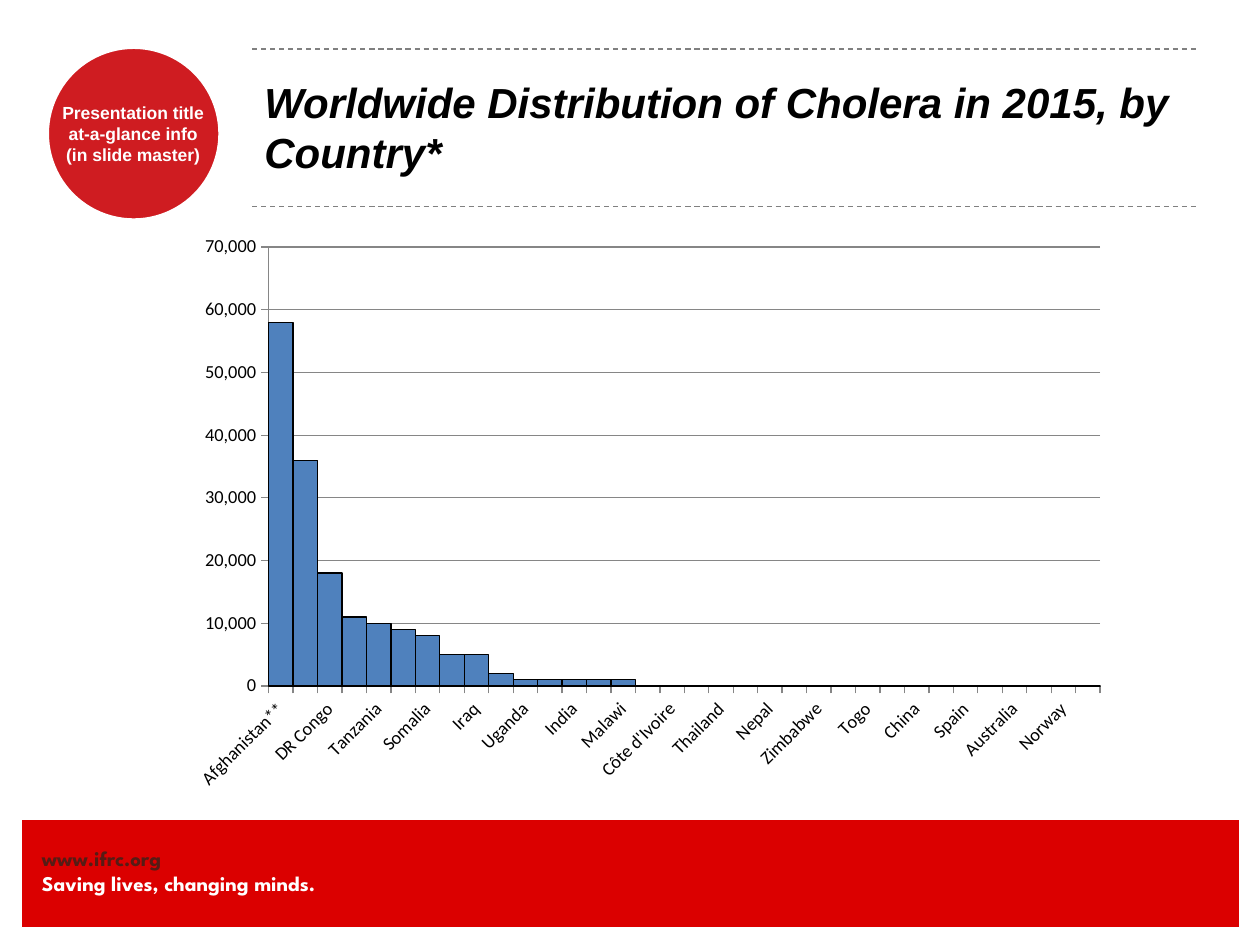
from lxml.etree import SubElement
from pptx import Presentation
from pptx.chart.data import CategoryChartData
from pptx.dml.color import RGBColor
from pptx.enum.chart import XL_CHART_TYPE, XL_TICK_MARK
from pptx.enum.dml import MSO_LINE
from pptx.enum.shapes import MSO_CONNECTOR, MSO_SHAPE
from pptx.enum.text import MSO_ANCHOR, PP_ALIGN
from pptx.oxml import parse_xml
from pptx.oxml.ns import nsdecls, qn
from pptx.util import Pt

TITLE = "Worldwide Distribution of Cholera in 2015, by Country*"
BADGE = ["Presentation title", "at-a-glance info", "(in slide master)"]
FOOTER = [("www.ifrc.org", "551C15"), ("Saving lives, changing minds.", "FFFFFF")]
CASES = [
    ("Afghanistan**", 58000), ("Haiti", 36000), ("DR Congo", 18000), ("Kenya", 11000),
    ("Tanzania", 10000), ("Mozambique", 9000), ("Somalia", 8000), ("Nigeria", 5000),
    ("Iraq", 5000), ("South Sudan", 2000), ("Uganda", 1000), ("India", 1000),
    ("India", 1000), ("Ghana", 1000), ("Malawi", 1000), ("Burundi", 0),
    ("Côte d'Ivoire", 0), ("Thailand", 0), ("Thailand", 0), ("Cameroon", 0),
    ("Nepal", 0), ("Nepal", 0), ("Zimbabwe", 0), ("Niger", 0), ("Togo", 0),
    ("United Kingdom", 0), ("China", 0), ("Japan", 0), ("Spain", 0),
    ("Switzerland", 0), ("Australia", 0), ("France", 0), ("Norway", 0), ("Sweden", 0),
]
PLOT_AREA = {"x": 0.1, "y": 0.04, "w": 0.88, "h": 0.76}
RULE_LEFT, RULE_RIGHT, RULE_TOPS = 144, 684, (28, 118)


def rgb(color):
    return RGBColor.from_string(color)


def style_line(line, color, width):
    line.color.rgb = rgb(color)
    line.width = Pt(width)


def add_panel(slide, preset, box, fill, line_width):
    panel = slide.shapes.add_shape(preset, *map(Pt, box))
    panel.shadow.inherit = False
    panel.fill.solid()
    panel.fill.fore_color.rgb = rgb(fill)
    style_line(panel.line, "FFFFFF", line_width)


def add_text(slide, box, lines, font, size, align=PP_ALIGN.LEFT, italic=False,
             inset=(0, 0), anchor=MSO_ANCHOR.TOP):
    frame = slide.shapes.add_textbox(*map(Pt, box)).text_frame
    frame.word_wrap = True
    frame.vertical_anchor = anchor
    frame.margin_left = frame.margin_right = Pt(inset[0])
    frame.margin_top = frame.margin_bottom = Pt(inset[1])
    for index, (words, color) in enumerate(lines):
        paragraph = frame.add_paragraph() if index else frame.paragraphs[0]
        paragraph.alignment = align
        run = paragraph.add_run()
        run.text = words
        run.font.name, run.font.size = font, Pt(size)
        run.font.bold, run.font.italic = True, italic
        run.font.color.rgb = rgb(color)


def add_rule(slide, top):
    rule = slide.shapes.add_connector(
        MSO_CONNECTOR.STRAIGHT, Pt(RULE_LEFT), Pt(top), Pt(RULE_RIGHT), Pt(top))
    style_line(rule.line, "808080", 0.75)
    rule.line.dash_style = MSO_LINE.DASH
    SubElement(rule._element.spPr, qn("a:effectLst"))


def place_plot(chart):
    parts = "".join(f'<c:{side}Mode val="edge"/>' for side in "xy")
    parts += "".join(f'<c:{side} val="{share}"/>' for side, share in PLOT_AREA.items())
    layout = parse_xml(
        f'<c:layout {nsdecls("c")}><c:manualLayout><c:layoutTarget val="inner"/>'
        f"{parts}</c:manualLayout></c:layout>")
    plot_area = chart._chartSpace.chart.plotArea
    for old_layout in plot_area.findall(qn("c:layout")):
        plot_area.remove(old_layout)
    plot_area.insert(0, layout)


def add_cases_chart(slide, box):
    cases = CategoryChartData(number_format="#,##0")
    cases.categories = [country for country, _ in CASES]
    cases.add_series("Series 1", [count for _, count in CASES])
    chart = slide.shapes.add_chart(
        XL_CHART_TYPE.COLUMN_CLUSTERED, *map(Pt, box), cases).chart
    chart.has_legend = chart.has_title = False
    chart.font.name, chart.font.size = "Calibri", Pt(10)
    chart.font.color.rgb = rgb("000000")

    columns = chart.plots[0]
    columns.gap_width = 0
    columns.vary_by_categories = False
    series = columns.series[0]
    series.format.fill.solid()
    series.format.fill.fore_color.rgb = rgb("4F81BD")
    style_line(series.format.line, "000000", 0.75)

    countries, counts = chart.category_axis, chart.value_axis
    for axis in (countries, counts):
        axis.major_tick_mark = XL_TICK_MARK.OUTSIDE
        axis.minor_tick_mark = XL_TICK_MARK.NONE
        axis.tick_labels.font.size = Pt(10.5)
        style_line(axis.format.line, "868686", 0.75)
    counts.minimum_scale, counts.maximum_scale, counts.major_unit = 0, 70000, 10000
    counts.tick_labels.number_format = "#,##0"
    counts.tick_labels.number_format_is_linked = False
    counts.has_major_gridlines = True
    style_line(counts.major_gridlines.format.line, "868686", 0.75)

    country_axis = countries._element
    country_axis.find(qn("c:txPr")).find(qn("a:bodyPr")).set("rot", "-2700000")
    label_skip = parse_xml(f'<c:tickLblSkip {nsdecls("c")} val="2"/>')
    country_axis.find(qn("c:noMultiLvlLbl")).addprevious(label_skip)
    place_plot(chart)


def main():
    """Build the cholera distribution slide."""
    deck = Presentation()
    deck.slide_width, deck.slide_height = Pt(720), Pt(540)
    slide = deck.slides.add_slide(deck.slide_layouts[6])
    add_panel(slide, MSO_SHAPE.RECTANGLE, (12.25, 468, 696, 62), "DB0000", 0.75)
    add_text(slide, (24, 483, 246, 29), FOOTER, "League Spartan", 12)
    add_panel(slide, MSO_SHAPE.OVAL, (26.75, 26.75, 99.25, 99.25), "CF1C21", 2.5)
    add_text(slide, (31, 58.5, 90, 36.5), [(line, "FFFFFF") for line in BADGE],
             "Arial", 10, PP_ALIGN.CENTER)
    for top in RULE_TOPS:
        add_rule(slide, top)
    add_text(slide, (RULE_LEFT, 27.5, RULE_RIGHT - RULE_LEFT, 90), [(TITLE, "000000")],
             "Arial", 24, italic=True, inset=(7.2, 3.6), anchor=MSO_ANCHOR.MIDDLE)
    add_cases_chart(slide, (99.5, 128, 540, 330))
    deck.save("out.pptx")


if __name__ == "__main__":
    main()
